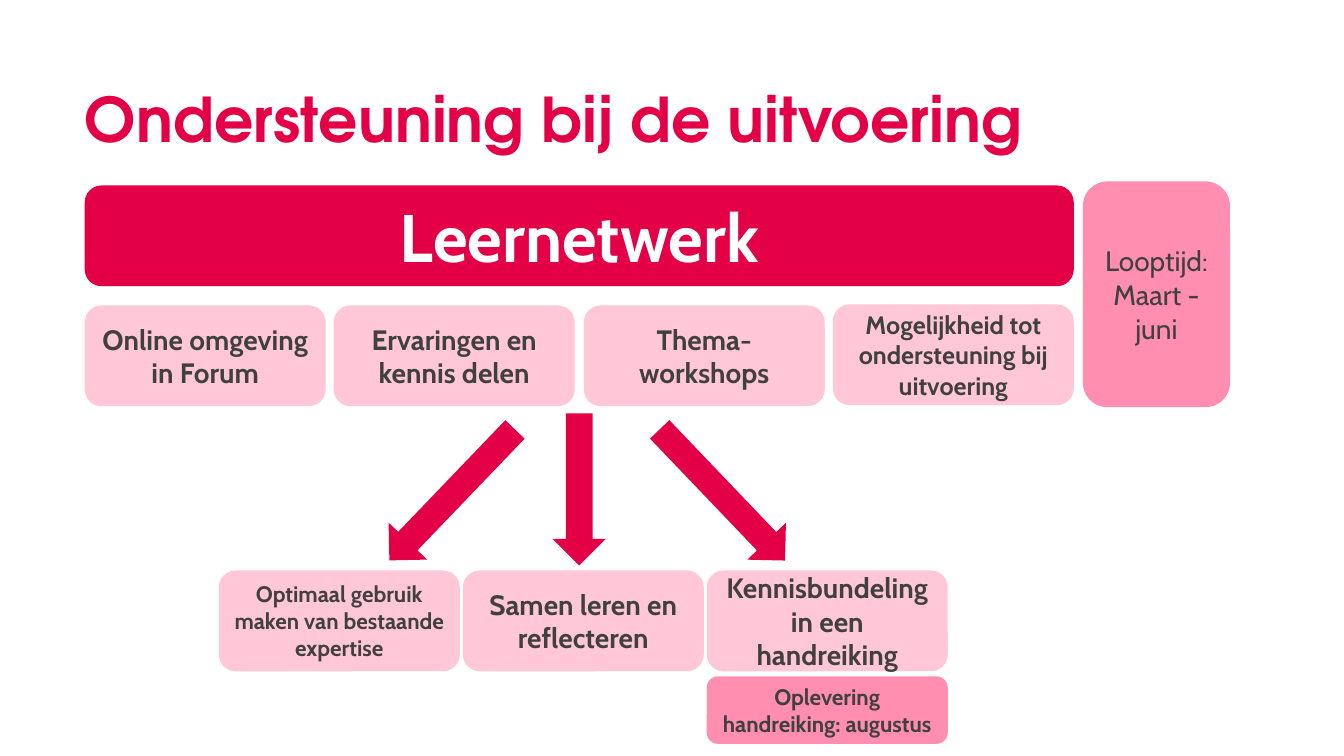
from dataclasses import dataclass

from pptx import Presentation
from pptx.dml.color import RGBColor
from pptx.enum.shapes import MSO_SHAPE as SHAPE
from pptx.enum.text import MSO_ANCHOR as ANCHOR, MSO_AUTO_SIZE as AUTO, PP_ALIGN as ALIGN
from pptx.util import Pt

PX = 9144
COLORS = {"red": "E40046", "pale": "FFC7D8", "pink": "FF8EB1", "dark": "404040", "white": "FFFFFF"}
TITLE_FONT, BODY_FONT = "TeX Gyre Adventor", "Cabin"
BOX_W, BOX_H = 239, 100
TOP_X, TOP_STEP = 84, 247.33
GOAL_X, GOAL_STEP, GOAL_Y = 217, 242, 566


@dataclass
class Box:
    x: int
    y: int
    text: str
    size: int = 20
    w: int = BOX_W
    h: int = BOX_H
    fill: str = "pale"
    color: str = "dark"
    bold: bool = True


@dataclass
class Arrow:
    x: int
    y: int
    h: int
    rotation: float = 0
    w: int = 53


ACTIVITIES = [
    ("Online omgeving in Forum", 20, 303),
    ("Ervaringen en kennis delen", 20, 303),
    ("Thema-workshops", 20, 303),
    ("Mogelijkheid tot ondersteuning bij uitvoering", 18, 302),
]
GOALS = [
    ("Optimaal gebruik maken van bestaande expertise", 16),
    ("Samen leren en reflecteren", 20),
    ("Kennisbundeling in een handreiking", 20),
]
BOXES = [
    Box(84, 184, "Leernetwerk", 48, w=981, fill="red", color="white"),
    *(Box(round(TOP_X + i * TOP_STEP), y, text, size) for i, (text, size, y) in enumerate(ACTIVITIES)),
    *(Box(GOAL_X + i * GOAL_STEP, GOAL_Y, text, size) for i, (text, size) in enumerate(GOALS)),
    Box(1074, 180, "Looptijd:\nMaart - juni", w=146, h=224, fill="pink", bold=False),
    Box(GOAL_X + 2 * GOAL_STEP, 671, "Oplevering handreiking: augustus", 16, h=67, fill="pink"),
]
ARROWS = [Arrow(422, 401, 180, 43.8), Arrow(548, 410, 151), Arrow(690, 401, 180, 316.3)]


def rgb(name: str) -> RGBColor:
    return RGBColor.from_string(COLORS[name])


def set_margins(tf, px: int) -> None:
    tf.margin_left = tf.margin_right = tf.margin_top = tf.margin_bottom = px * PX


def format_text(tf, align, font: str, size: int, color: str, bold: bool) -> None:
    for p in tf.paragraphs:
        p.alignment = align
        for r in p.runs:
            r.font.name, r.font.size, r.font.bold = font, Pt(size), bold
            r.font.color.rgb = rgb(color)


def add_filled(slide, kind, item: Box | Arrow, fill: str):
    sp = slide.shapes.add_shape(kind, item.x * PX, item.y * PX, item.w * PX, item.h * PX)
    sp.shadow.inherit = False
    sp.fill.solid()
    sp.fill.fore_color.rgb = rgb(fill)
    sp.line.fill.background()
    return sp


def add_box(slide, box: Box) -> None:
    tf = add_filled(slide, SHAPE.ROUNDED_RECTANGLE, box, box.fill).text_frame
    tf.word_wrap = True
    tf.vertical_anchor = ANCHOR.MIDDLE
    set_margins(tf, 8)
    tf.text = box.text
    format_text(tf, ALIGN.CENTER, BODY_FONT, box.size, box.color, box.bold)


def add_arrow(slide, arrow: Arrow) -> None:
    add_filled(slide, SHAPE.DOWN_ARROW, arrow, "red").rotation = arrow.rotation


def add_title(slide, text: str) -> None:
    sp = slide.shapes.title
    sp.left, sp.top, sp.width, sp.height = 84 * PX, 89 * PX, 1166 * PX, 67 * PX
    tf = sp.text_frame
    tf.text = text
    tf.word_wrap = True
    tf.auto_size = AUTO.SHAPE_TO_FIT_TEXT
    tf.vertical_anchor = ANCHOR.TOP
    set_margins(tf, 0)
    tf.paragraphs[0].line_spacing = 0.9
    format_text(tf, ALIGN.LEFT, TITLE_FONT, 44, "red", True)


def main() -> None:
    """Build the slide about the learning network and its goals."""
    prs = Presentation()
    prs.slide_width, prs.slide_height = 1333 * PX, 750 * PX
    slide = prs.slides.add_slide(prs.slide_layouts[5])
    add_title(slide, "Ondersteuning bij de uitvoering")
    for box in BOXES:
        add_box(slide, box)
    for arrow in ARROWS:
        add_arrow(slide, arrow)
    prs.save("out.pptx")


if __name__ == "__main__":
    main()
